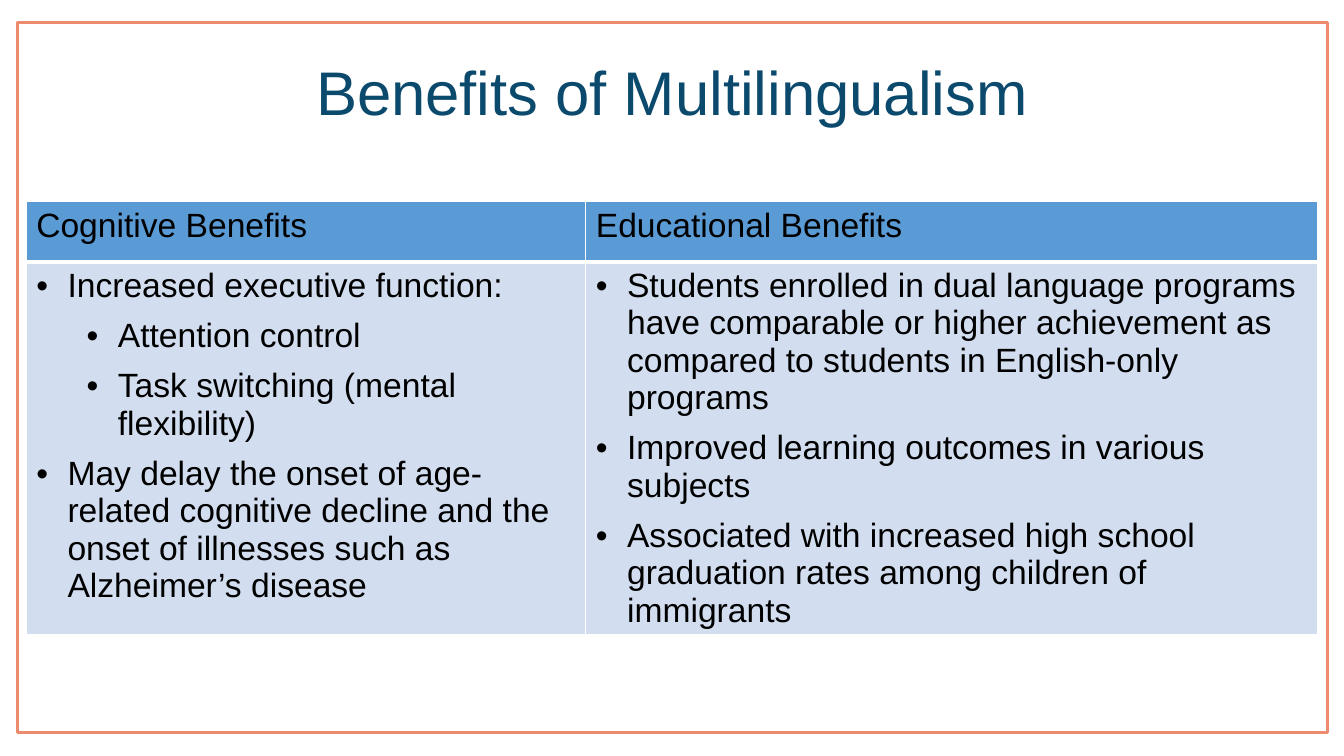
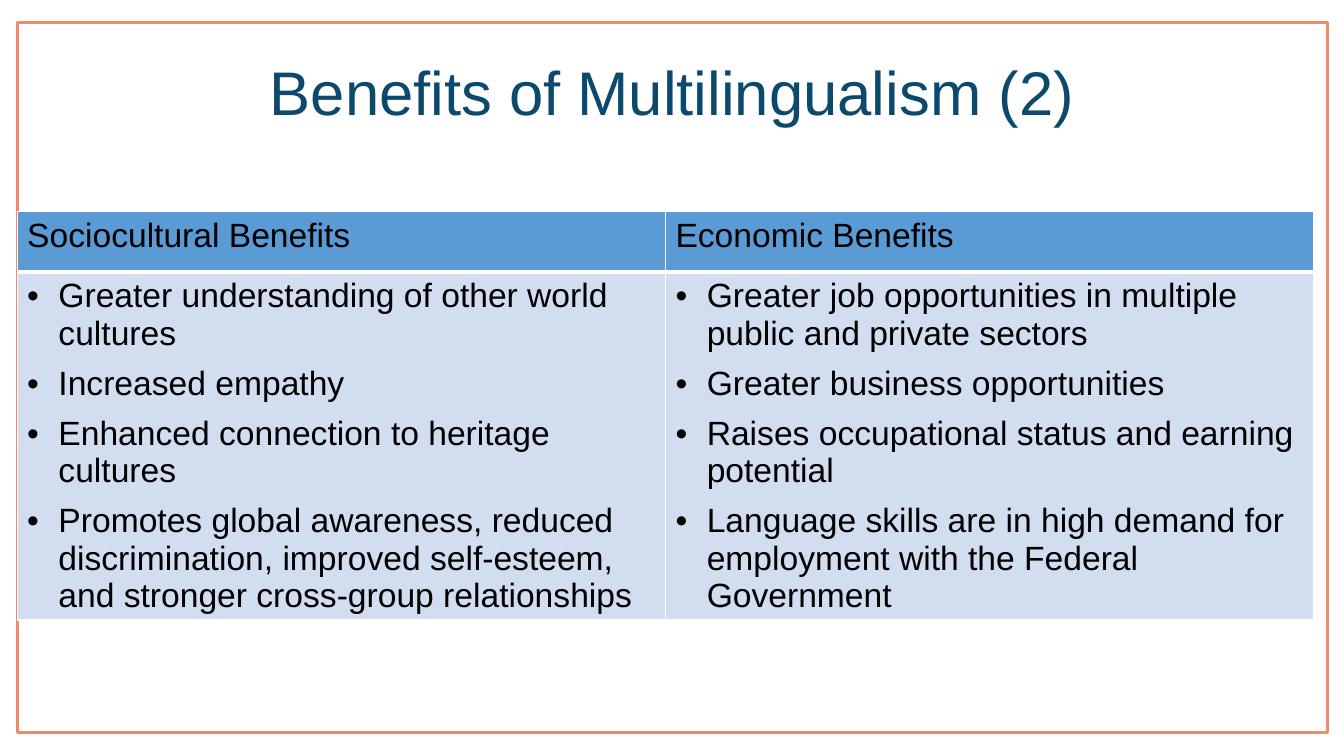
from lxml import etree
from pptx import Presentation, util as u
from pptx.dml.color import RGBColor
from pptx.enum import shapes, text
from pptx.oxml.ns import qn

# Content: title, table place, column widths, body height, columns of (level, text)
SLIDES = [
    dict(title="Benefits of Multilingualism", at=(0.26, 2), cols=(5.55, 7.26), body=3.69, lists=[
        ("Cognitive Benefits", [
            (0, "Increased executive function:"),
            (1, "Attention control"),
            (1, "Task switching (mental flexibility)"),
            (0, "May delay the onset of age-related cognitive decline and the "
                "onset of illnesses such as Alzheimer’s disease")]),
        ("Educational Benefits", [
            (0, "Students enrolled in dual language programs have comparable or higher "
                "achievement as compared to students in English-only programs"),
            (0, "Improved learning outcomes in various subjects"),
            (0, "Associated with increased high school graduation rates among "
                "children of immigrants")])]),
    dict(title="Benefits of Multilingualism (2)", at=(0.17, 2.1), cols=(6.43, 6.43), body=3.45, lists=[
        ("Sociocultural Benefits", [
            (0, "Greater understanding of other world cultures"),
            (0, "Increased empathy"),
            (0, "Enhanced connection to heritage cultures"),
            (0, "Promotes global awareness, reduced discrimination, improved "
                "self-esteem, and stronger cross-group relationships")]),
        ("Economic Benefits", [
            (0, "Greater job opportunities in multiple public and private sectors"),
            (0, "Greater business opportunities"),
            (0, "Raises occupational status and earning potential"),
            (0, "Language skills are in high demand for employment with the "
                "Federal Government")])]),
]

# Shared style
HUES = dict(title="0C4A6D", frame="ED8B6F", head="5B9BD5", body="D2DEEF", ink="000000", rule="FFFFFF")
FONT = "Arial"
FRAME = (0.17, 0.22, 13, 7.05)
TITLE = (0.17, 0.22, 13, 1.45)
HEAD = 0.6           # header row height
HANG, STEP = 0.31, 0.5  # bullet indent, shift per level
GAP = 9              # points between bullets


def hue(name):
    return RGBColor.from_string(HUES[name])


def inches(nums):
    return [u.Inches(n) for n in nums]


def write(para, words, size, ink):
    run = para.add_run()
    run.text = words
    font = run.font
    font.name, font.size, font.bold = FONT, u.Pt(size), False
    font.color.rgb = hue(ink)


def bullet(para, level):
    para.level = level
    props = para._p.get_or_add_pPr()
    props.set("marL", str(u.Inches(HANG + level * STEP)))
    props.set("indent", str(-u.Inches(HANG)))
    etree.SubElement(props, qn("a:buFont"), typeface=FONT)
    etree.SubElement(props, qn("a:buChar"), char="•")


def paint(cell, fill, base):
    props = cell._tc.get_or_add_tcPr()
    for side, width in zip("LRTB", (1, 1, 1, base)):
        line = etree.SubElement(props, qn("a:ln" + side), w=str(u.Pt(width)))
        solid = etree.SubElement(line, qn("a:solidFill"))
        etree.SubElement(solid, qn("a:srgbClr"), val=HUES["rule"])
    cell.fill.solid()
    cell.fill.fore_color.rgb = hue(fill)


def add_frame(slide, layout):
    """Draw the border once and place it on the layout, behind the rest."""
    box = slide.shapes.add_shape(shapes.MSO_SHAPE.RECTANGLE, *inches(FRAME))
    box.shadow.inherit = False
    box.fill.background()
    box.line.color.rgb = hue("frame")
    box.line.width = u.Pt(2)
    layout.shapes.element.insert(2, box.element)


def add_title(slide, words):
    title = slide.shapes.title
    title.left, title.top, title.width, title.height = inches(TITLE)
    title.text_frame.vertical_anchor = text.MSO_ANCHOR.MIDDLE
    para = title.text_frame.paragraphs[0]
    para.alignment = text.PP_ALIGN.CENTER
    para.line_spacing = 0.9
    write(para, words, 44, "title")


def add_grid(slide, at, cols, body, lists):
    size = (sum(cols), HEAD + body)
    grid = slide.shapes.add_table(2, len(cols), *inches(at + size)).table
    grid.rows[0].height, grid.rows[1].height = inches((HEAD, body))
    for col, (width, (head, items)) in enumerate(zip(cols, lists)):
        grid.columns[col].width = u.Inches(width)
        top, low = grid.cell(0, col), grid.cell(1, col)
        paint(top, "head", 3)
        paint(low, "body", 1)
        write(top.text_frame.paragraphs[0], head, 24, "ink")
        for num, (level, words) in enumerate(items):
            frame = low.text_frame
            para = frame.add_paragraph() if num else frame.paragraphs[0]
            if num:
                para.space_before = u.Pt(GAP)
            bullet(para, level)
            write(para, words, 24, "ink")


def main():
    deck = Presentation()
    deck.slide_width, deck.slide_height = inches((13.33, 7.5))
    layout = deck.slide_layouts[5]
    for num, page in enumerate(SLIDES):
        slide = deck.slides.add_slide(layout)
        if num == 0:
            add_frame(slide, layout)
        add_title(slide, page["title"])
        add_grid(slide, page["at"], page["cols"], page["body"], page["lists"])
    deck.save("out.pptx")


if __name__ == "__main__":
    main()
